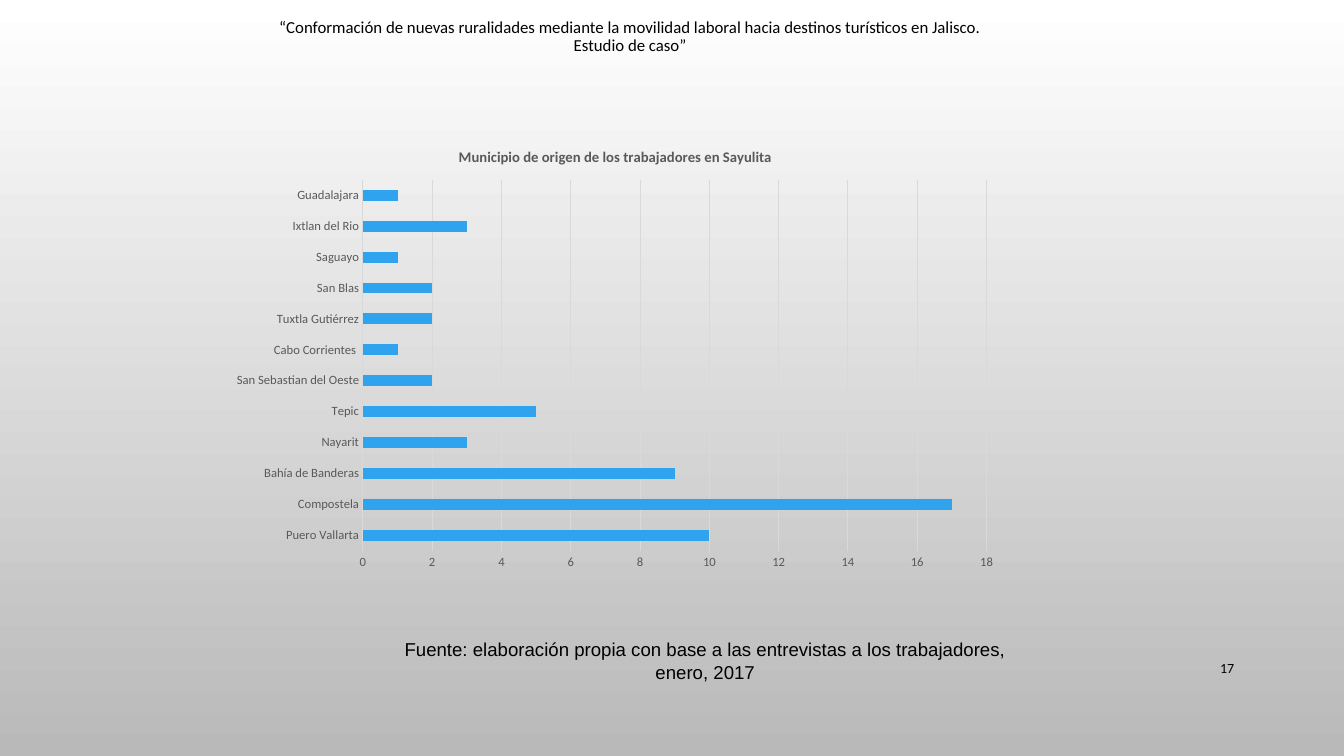
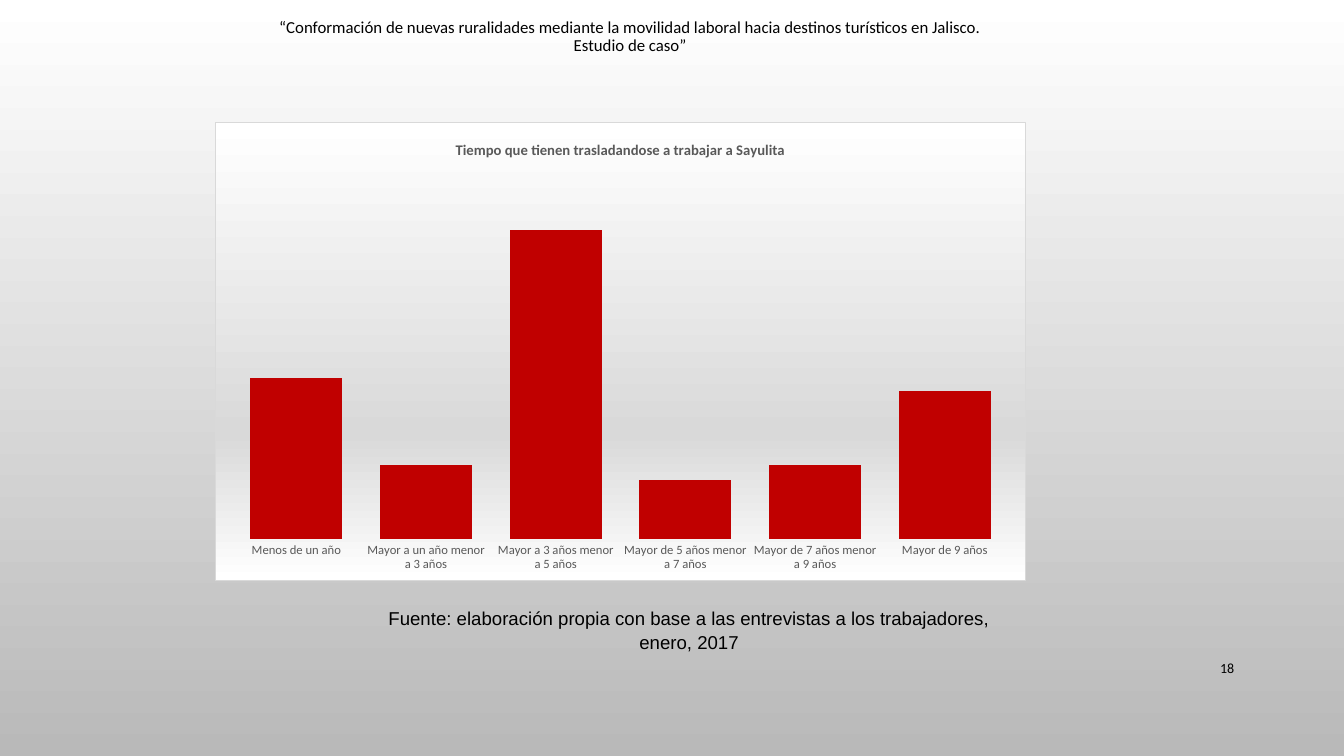
from pptx import Presentation
from pptx.chart.data import CategoryChartData as ChartData
from pptx.dml.color import RGBColor as RGB
from pptx.enum.chart import XL_CHART_TYPE as Kind, XL_TICK_MARK as Tick
from pptx.enum.text import MSO_ANCHOR as Anchor, PP_ALIGN as Align
from pptx.oxml import parse_xml
from pptx.oxml.ns import nsdecls
from pptx.util import Inches, Pt

INK = {"black": "000000", "gray": "595959", "rule": "D9D9D9", "white": "FFFFFF",
       "base": "B9B9B9", "blue": "2FA3EE", "red": "C00000"}
HEAD = ("“Conformación de nuevas ruralidades mediante la movilidad laboral "
        "hacia destinos turísticos en Jalisco.\vEstudio de caso”")
SOURCE = ("Fuente: elaboración propia con base a las entrevistas "
          "a los trabajadores, enero, 2017")
ORIGINS = {"Puero Vallarta": 10, "Compostela": 17, "Bahía de Banderas": 9,
           "Nayarit": 3, "Tepic": 5, "San Sebastian del Oeste": 2,
           "Cabo Corrientes ": 1, "Tuxtla Gutiérrez": 2, "San Blas": 2,
           "Saguayo": 1, "Ixtlan del Rio": 3, "Guadalajara": 1}
YEARS = {"Menos de un año": 52, "Mayor a un año menor a 3 años": 24,
         "Mayor a 3 años menor a 5 años": 100,
         "Mayor de 5 años menor a 7 años": 19,
         "Mayor de 7 años menor a 9 años": 24, "Mayor de 9 años": 48}


def color(name):
    return RGB.from_string(INK[name])


class Deck:
    def __init__(self):
        self.prs = Presentation()
        self.prs.slide_width, self.prs.slide_height = Inches(13.33), Inches(7.5)
        fill = self.prs.slide_master.background.fill
        fill.gradient()
        fill.gradient_angle = 270
        for stop, name in zip(fill.gradient_stops, ("white", "base")):
            stop.color.rgb = color(name)

    def style(self, font, size, name="black", face="Calibri", bold=False):
        font.name, font.size, font.bold = face, Pt(size), bold
        font.color.rgb = color(name)

    def page(self, number):
        self.slide = self.prs.slides.add_slide(self.prs.slide_layouts[5])
        title = self.slide.shapes.title
        title.left, title.top = Inches(2.25), Inches(0.1)
        title.width, title.height = Inches(8), Inches(0.54)
        frame = title.text_frame
        frame.text = HEAD
        frame.vertical_anchor = Anchor.MIDDLE
        line = frame.paragraphs[0]
        line.alignment, line.line_spacing = Align.CENTER, 0.9
        self.style(line.font, 12)
        self.text(str(number), (11.5, 6.43, 0.84, 0.4), 10, Align.RIGHT)

    def text(self, words, box, size, align, face="Calibri", anchor=Anchor.MIDDLE):
        frame = self.slide.shapes.add_textbox(*map(Inches, box)).text_frame
        frame.word_wrap, frame.vertical_anchor = True, anchor
        line = frame.paragraphs[0]
        line.text, line.alignment = words, align
        self.style(line.font, size, face=face)
        return line

    def source(self, left, top):
        line = self.text(SOURCE, (left, top, 6.67, 0.56), 13.3, Align.CENTER,
                         "Arial", Anchor.TOP)
        line.line_spacing = 1.07

    def chart(self, kind, title, rows, box, fill, gap, top, area):
        data = ChartData()
        data.categories = list(rows)
        data.add_series("Series 1", list(rows.values()))
        chart = self.slide.shapes.add_chart(kind, *map(Inches, box), data).chart
        self.style(chart.font, 10)
        chart.has_legend = False
        chart.has_title = True
        frame = chart.chart_title.text_frame
        frame.text = title
        self.style(frame.paragraphs[0].font, 10.5, "gray", bold=True)
        chart.chart_title.include_in_layout = False
        plot = chart.plots[0]
        plot.gap_width, plot.vary_by_categories = gap, False
        paint = plot.series[0].format.fill
        paint.solid()
        paint.fore_color.rgb = color(fill)
        for axis in (chart.category_axis, chart.value_axis):
            axis.major_tick_mark = axis.minor_tick_mark = Tick.NONE
            axis.has_major_gridlines = False
            axis.format.line.fill.background()
            self.style(axis.tick_labels.font, 9, "gray")
        chart.value_axis.minimum_scale = 0
        chart.value_axis.maximum_scale = top
        self.layout(chart, area)
        return chart

    def layout(self, chart, area):
        spots = "".join(f'<c:{key} val="{size}"/>' for key, size in zip("xywh", area))
        plot = chart._chartSpace.xpath("c:chart/c:plotArea")[0]
        for old in plot.xpath("c:layout"):
            plot.remove(old)
        plot.insert(0, parse_xml(
            f'<c:layout {nsdecls("c")}><c:manualLayout><c:layoutTarget val="inner"/>'
            f'<c:xMode val="edge"/><c:yMode val="edge"/>{spots}'
            '</c:manualLayout></c:layout>'))

    def rule(self, line):
        line.color.rgb = color("rule")
        line.width = Pt(0.75)

    def panel(self, chart, stops=()):
        fill = edge = "<a:noFill/>"
        if stops:
            marks = "".join(f'<a:gs pos="{spot * 1000}"><a:srgbClr val="{INK[name]}"/></a:gs>'
                            for spot, name in stops)
            fill = f'<a:gradFill><a:gsLst>{marks}</a:gsLst><a:lin ang="5400000"/></a:gradFill>'
            edge = f'<a:solidFill><a:srgbClr val="{INK["rule"]}"/></a:solidFill>'
        chart._chartSpace.xpath("c:chart")[0].addnext(parse_xml(
            f'<c:spPr {nsdecls("c", "a")}>{fill}<a:ln w="{Pt(0.75)}">{edge}</a:ln></c:spPr>'))


def main():
    deck = Deck()

    deck.page(17)
    chart = deck.chart(Kind.BAR_CLUSTERED,
                       "Municipio de origen de los trabajadores en Sayulita",
                       ORIGINS, (2.19, 1.29, 7.83, 4.49), "blue", 182, 18,
                       (0.18, 0.11, 0.79, 0.82))
    chart.value_axis.major_unit = 2
    chart.value_axis.has_major_gridlines = True
    deck.rule(chart.value_axis.major_gridlines.format.line)
    deck.rule(chart.category_axis.format.line)
    deck.panel(chart)
    deck.source(3.66, 6.26)

    deck.page(18)
    chart = deck.chart(Kind.COLUMN_CLUSTERED,
                       "Tiempo que tienen trasladandose a trabajar a Sayulita",
                       YEARS, (2.13, 1.21, 8.05, 4.55), "red", 41, 120,
                       (0.02, 0.1, 0.96, 0.81))
    chart.value_axis.visible = False
    deck.panel(chart, ((0, "white"), (68, "rule"), (100, "white")))
    deck.source(3.5, 5.96)

    deck.prs.save("out.pptx")


if __name__ == "__main__":
    main()
